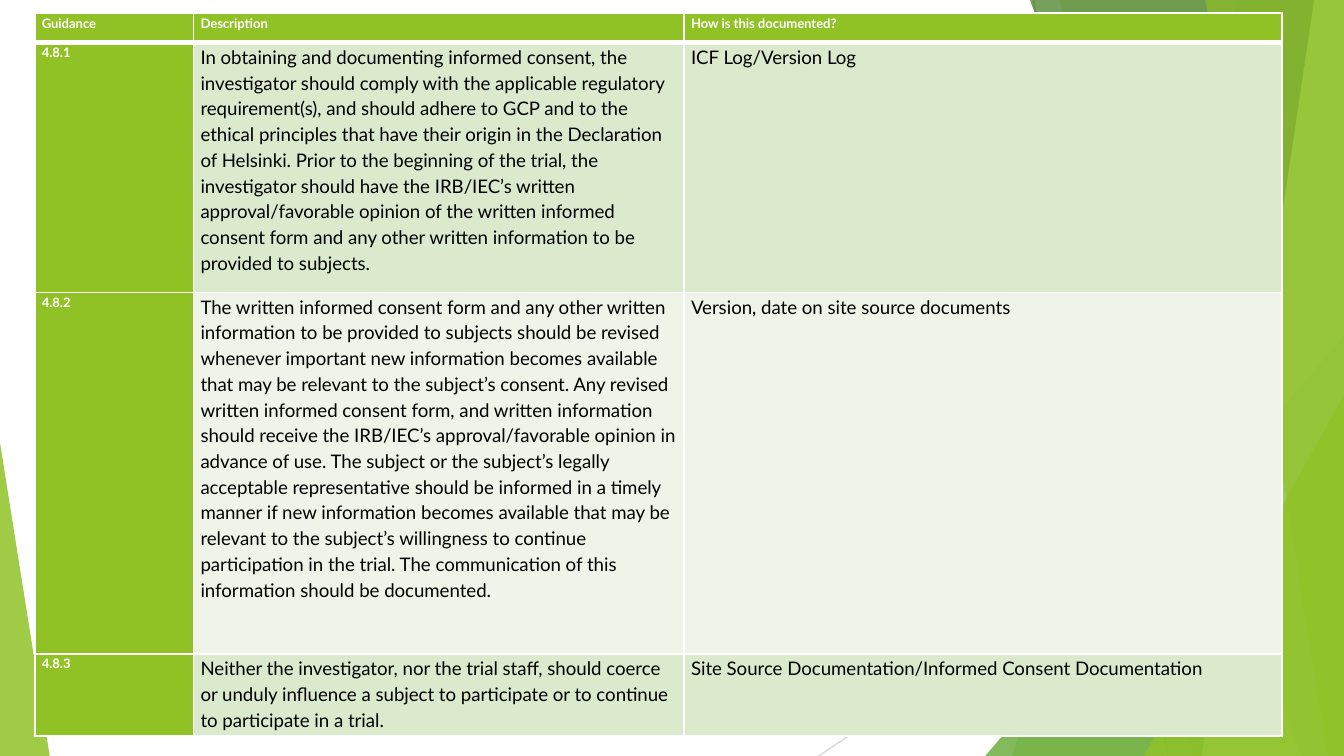
import dataclasses

import pptx
import pptx.dml.color
import pptx.enum.shapes
import pptx.oxml
import pptx.oxml.ns
import pptx.util
from pptx.util import Cm


@dataclasses.dataclass(frozen=True)
class Theme:
    font: str = "Lato"
    label_size: int = 7
    body_size: int = 10
    white: str = "FFFFFF"
    black: str = "000000"
    lime: str = "90C226"
    pale_lime: str = "C0E474"
    green: str = "54A021"
    dark_green: str = "3F7819"
    odd_row: str = "DBE9CD"
    even_row: str = "EEF4E8"
    gray: str = "BFBFBF"
    light_gray: str = "D9D9D9"


theme = Theme()
RGB = pptx.dml.color.RGBColor.from_string
SLIDE_WIDTH, SLIDE_HEIGHT = 25.4, 14.29


def add_child(parent, tag, **attributes):
    child = pptx.oxml.parse_xml(f"<{tag} {pptx.oxml.ns.nsdecls('a')}/>")
    for name, value in attributes.items():
        child.set(name, str(value))
    parent.append(child)
    return child


def paint(shape, color, opacity):
    """Fill without outline or shadow, at an opacity in percent."""
    shape.shadow.inherit = False
    shape.line.fill.background()
    shape.fill.solid()
    shape.fill.fore_color.rgb = RGB(color)
    color_element = shape.fill._xPr.find(".//" + pptx.oxml.ns.qn("a:srgbClr"))
    add_child(color_element, "a:alpha", val=opacity * 1000)


deck = pptx.Presentation()
deck.slide_width, deck.slide_height = Cm(SLIDE_WIDTH), Cm(SLIDE_HEIGHT)
page = deck.slides.add_slide(deck.slide_layouts[6])
page.background.fill.solid()
page.background.fill.fore_color.rgb = RGB(theme.white)

# Thin background lines: start x, start y, end x, color
for start_x, start_y, end_x, color in [
    (19.53, 0, 22.07, theme.gray),
    (SLIDE_WIDTH, 7.67, 15.47, theme.light_gray),
]:
    line = page.shapes.add_connector(
        pptx.enum.shapes.MSO_CONNECTOR.STRAIGHT,
        Cm(start_x), Cm(start_y), Cm(end_x), Cm(SLIDE_HEIGHT),
    )
    line.line.color.rgb = RGB(color)
    line.line.width = pptx.util.Pt(0.75)
    add_child(line._element.spPr, "a:effectLst")

# Bands reach the right edge: top x, bottom x.
# Triangles stand on the bottom edge: left, top, width, apex position.
facets = [
    ("band", (23.39, 19.13), theme.lime, 30),
    ("band", (20.02, 22.53), theme.lime, 20),
    ("triangle", (18.62, 6.35, 6.78, 1), theme.green, 72),
    ("band", (19.46, 24.59), theme.dark_green, 70),
    ("band", (24.84, 22.71), theme.pale_lime, 70),
    ("band", (22.78, 25.1), theme.lime, 65),
    ("triangle", (21.62, 7.47, 3.78, 1), theme.lime, 80),
    ("triangle", (0, 8.36, 0.94, 0), theme.lime, 85),
]
for kind, geometry, color, opacity in facets:
    if kind == "band":
        top_x, bottom_x = geometry
        outline = page.shapes.build_freeform(Cm(top_x), Cm(-0.02))
        outline.add_line_segments([
            (Cm(SLIDE_WIDTH), Cm(-0.02)),
            (Cm(SLIDE_WIDTH), Cm(SLIDE_HEIGHT)),
            (Cm(bottom_x), Cm(SLIDE_HEIGHT)),
        ], close=True)
        facet = outline.convert_to_shape()
    else:
        left, top, width, apex = geometry
        facet = page.shapes.add_shape(
            pptx.enum.shapes.MSO_SHAPE.ISOSCELES_TRIANGLE,
            Cm(left), Cm(top), Cm(width), Cm(SLIDE_HEIGHT - top),
        )
        facet.adjustments[0] = apex
    paint(facet, color, opacity)

rows = [
    ("Guidance", "Description", "How is this documented?"),
    (
        "4.8.1",
        "In obtaining and documenting informed consent, the investigator should comply "
        "with the applicable regulatory requirement(s), and should adhere to GCP and to "
        "the ethical principles that have their origin in the Declaration of Helsinki. "
        "Prior to the beginning of the trial, the investigator should have the IRB/IEC’s "
        "written approval/favorable opinion of the written informed consent form and any "
        "other written information to be provided to subjects.",
        "ICF Log/Version Log",
    ),
    (
        "4.8.2",
        "The written informed consent form and any other written information to be "
        "provided to subjects should be revised whenever important new information "
        "becomes available that may be relevant to the subject’s consent. Any revised "
        "written informed consent form, and written information should receive the "
        "IRB/IEC’s approval/favorable opinion in advance of use. The subject or the "
        "subject’s legally acceptable representative should be informed in a timely "
        "manner if new information becomes available that may be relevant to the "
        "subject’s willingness to continue participation in the trial. The communication "
        "of this information should be documented.",
        "Version, date on site source documents",
    ),
    (
        "4.8.3",
        "Neither the investigator, nor the trial staff, should coerce or unduly influence "
        "a subject to participate or to continue to participate in a trial.",
        "Site Source Documentation/Informed Consent Documentation",
    ),
]
column_widths = [3, 9.27, 11.3]
row_heights = [0.56, 4.72, 6.83, 1.55]
table = page.shapes.add_table(
    len(rows), len(column_widths), Cm(0.66), Cm(0.25),
    Cm(sum(column_widths)), Cm(sum(row_heights)),
).table
for column, width in zip(table.columns, column_widths):
    column.width = Cm(width)
for row, height in zip(table.rows, row_heights):
    row.height = Cm(height)

for row_index, texts in enumerate(rows):
    for column_index, text in enumerate(texts):
        is_label = row_index == 0 or column_index == 0
        cell = table.cell(row_index, column_index)
        cell.margin_left = cell.margin_right = Cm(0.13)
        cell.margin_top = cell.margin_bottom = 0

        # A thick rule separates the header from the body
        thick_side = {0: "B", 1: "T"}.get(row_index)
        for side in "LRTB":
            border_width = pptx.util.Pt(3 if side == thick_side else 1)
            border = add_child(cell._tc.get_or_add_tcPr(), f"a:ln{side}", w=border_width)
            add_child(add_child(border, "a:solidFill"), "a:srgbClr", val=theme.white)

        cell.fill.solid()
        stripe = theme.odd_row if row_index % 2 else theme.even_row
        cell.fill.fore_color.rgb = RGB(theme.lime if is_label else stripe)

        para = cell.text_frame.paragraphs[0]
        para.line_spacing = 1.15
        span = para.add_run()
        span.text = text
        span.font.name = theme.font
        span.font.size = pptx.util.Pt(theme.label_size if is_label else theme.body_size)
        span.font.bold = is_label
        span.font.color.rgb = RGB(theme.white if is_label else theme.black)

deck.save("out.pptx")
